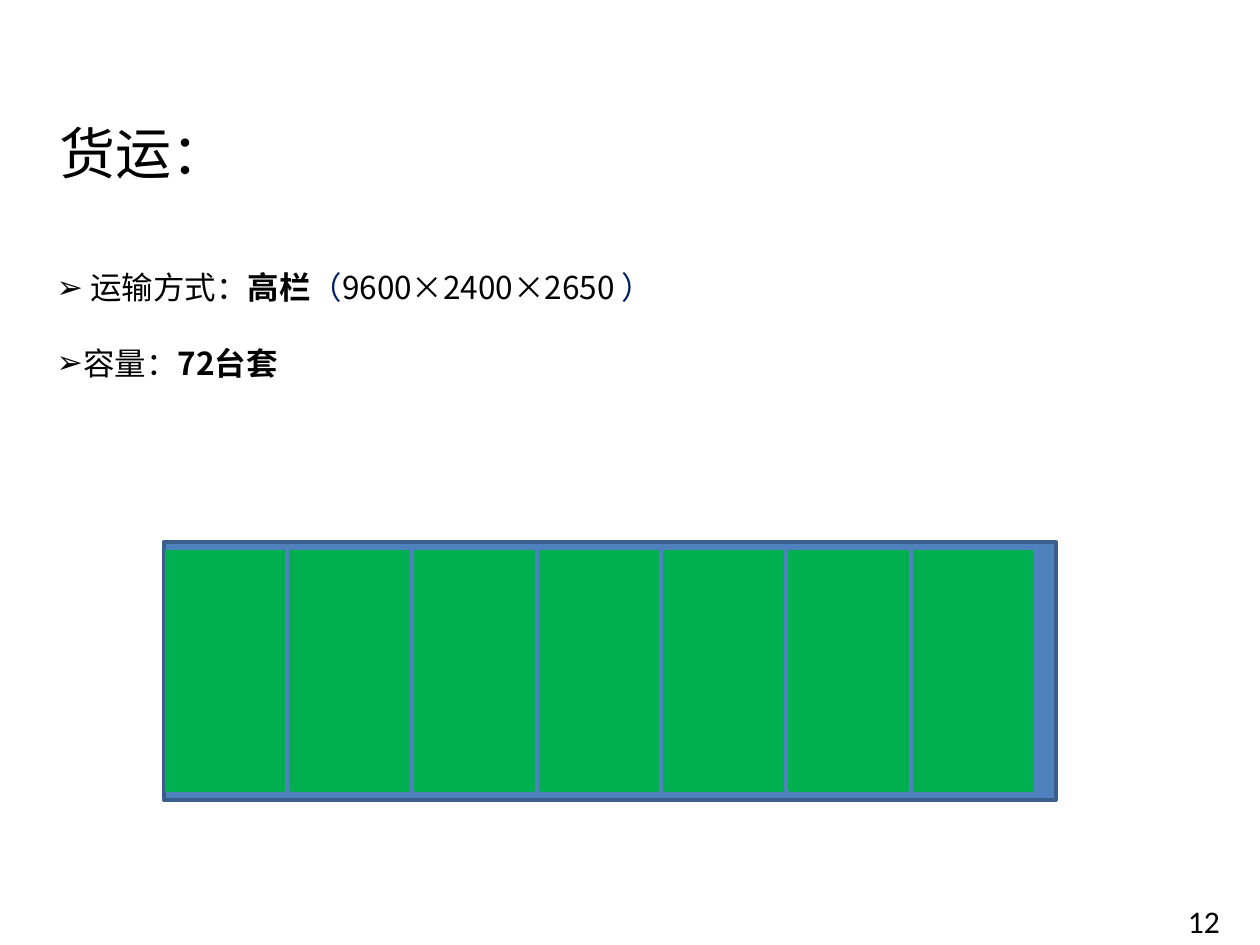
from lxml import etree
from pptx import Presentation
from pptx.dml.color import RGBColor
from pptx.enum.shapes import MSO_SHAPE
from pptx.enum.text import MSO_ANCHOR, MSO_AUTO_SIZE, PP_ALIGN
from pptx.oxml.ns import qn
from pptx.util import Inches, Pt

RECT = MSO_SHAPE.RECTANGLE
MIDDLE, TOP = MSO_ANCHOR.MIDDLE, MSO_ANCHOR.TOP
NO_FIT = MSO_AUTO_SIZE.NONE
LEFT = PP_ALIGN.LEFT

CJK = "Noto Sans CJK SC"
BLACK, NAVY = "000000", "002060"
TRUCK, TRUCK_EDGE, CARGO = "4F81BD", "3A5F8C", "00B050"


def color(hex_text):
    return RGBColor.from_string(hex_text)


def place(sp, box):
    sp.left, sp.top, sp.width, sp.height = (Inches(v) for v in box)


def set_frame(tf, anchor):
    tf.word_wrap = True
    tf.auto_size = NO_FIT
    tf.vertical_anchor = anchor


def add_run(p, text, size, hex_text=BLACK, bold=False, font=CJK):
    r = p.add_run()
    r.text = text
    r.font.size = Pt(size)
    r.font.bold = bold
    r.font.color.rgb = color(hex_text)
    r.font.name = font
    etree.SubElement(r.font._element, qn("a:ea")).set("typeface", font)


def add_bullet(p, char):
    pPr = p._p.get_or_add_pPr()
    pPr.set("marL", "0")
    pPr.set("indent", "0")
    etree.SubElement(pPr, qn("a:buChar")).set("char", char)


def add_title(slide, box, text):
    sp = slide.shapes.title
    place(sp, box)
    set_frame(sp.text_frame, MIDDLE)
    p = sp.text_frame.paragraphs[0]
    p.alignment = LEFT
    add_run(p, text, 32)


def add_list(slide, box, items):
    sp = slide.placeholders[1]
    place(sp, box)
    tf = sp.text_frame
    set_frame(tf, TOP)
    for i, runs in enumerate(items):
        p = tf.paragraphs[0] if i == 0 else tf.add_paragraph()
        add_bullet(p, "➢")
        p.line_spacing = 2.0
        p.space_before = Pt(0)
        for text, hex_text, bold in runs:
            add_run(p, text, 18, hex_text, bold)


def add_rect(slide, box, fill, line):
    sp = slide.shapes.add_shape(RECT, *(Inches(v) for v in box))
    sp.shadow.inherit = False
    sp.fill.solid()
    sp.fill.fore_color.rgb = color(fill)
    sp.line.color.rgb = color(line)
    sp.line.width = Pt(2)


def add_truck(slide, box, count):
    """Truck bed seen from above, with equal cargo stacks from the left."""
    x, y, w, h = box
    add_rect(slide, box, TRUCK, TRUCK_EDGE)
    pitch, stack_w, margin = 0.99, 0.93, 0.08
    for i in range(count):
        stack = (x + 0.02 + i * pitch, y + margin, stack_w, h - 2 * margin)
        add_rect(slide, stack, CARGO, CARGO)


def add_page_number(slide, box, text):
    sp = slide.shapes.add_textbox(*(Inches(v) for v in box))
    set_frame(sp.text_frame, TOP)
    add_run(sp.text_frame.paragraphs[0], text, 18, font="Calibri")


def main():
    prs = Presentation()
    prs.slide_width, prs.slide_height = Inches(10), Inches(7.5)
    slide = prs.slides.add_slide(prs.slide_layouts[1])

    # Heading and transport facts
    add_title(slide, (0.37, 0.89, 6.06, 0.64), "货运：")
    add_list(slide, (0.35, 1.78, 8.83, 1.46), [
        [(" 运输方式：", BLACK, False), ("高栏", BLACK, True),
         ("（", NAVY, False), ("9600×2400×2650 ", BLACK, False),
         ("）", NAVY, False)],
        [("容量：", BLACK, False), ("72台套", BLACK, True)],
    ])

    # Loading plan
    add_truck(slide, (1.3, 4.3, 7.08, 2.05), 7)

    add_page_number(slide, (9.33, 7.11, 0.65, 0.36), "12")
    prs.save("out.pptx")


if __name__ == "__main__":
    main()
